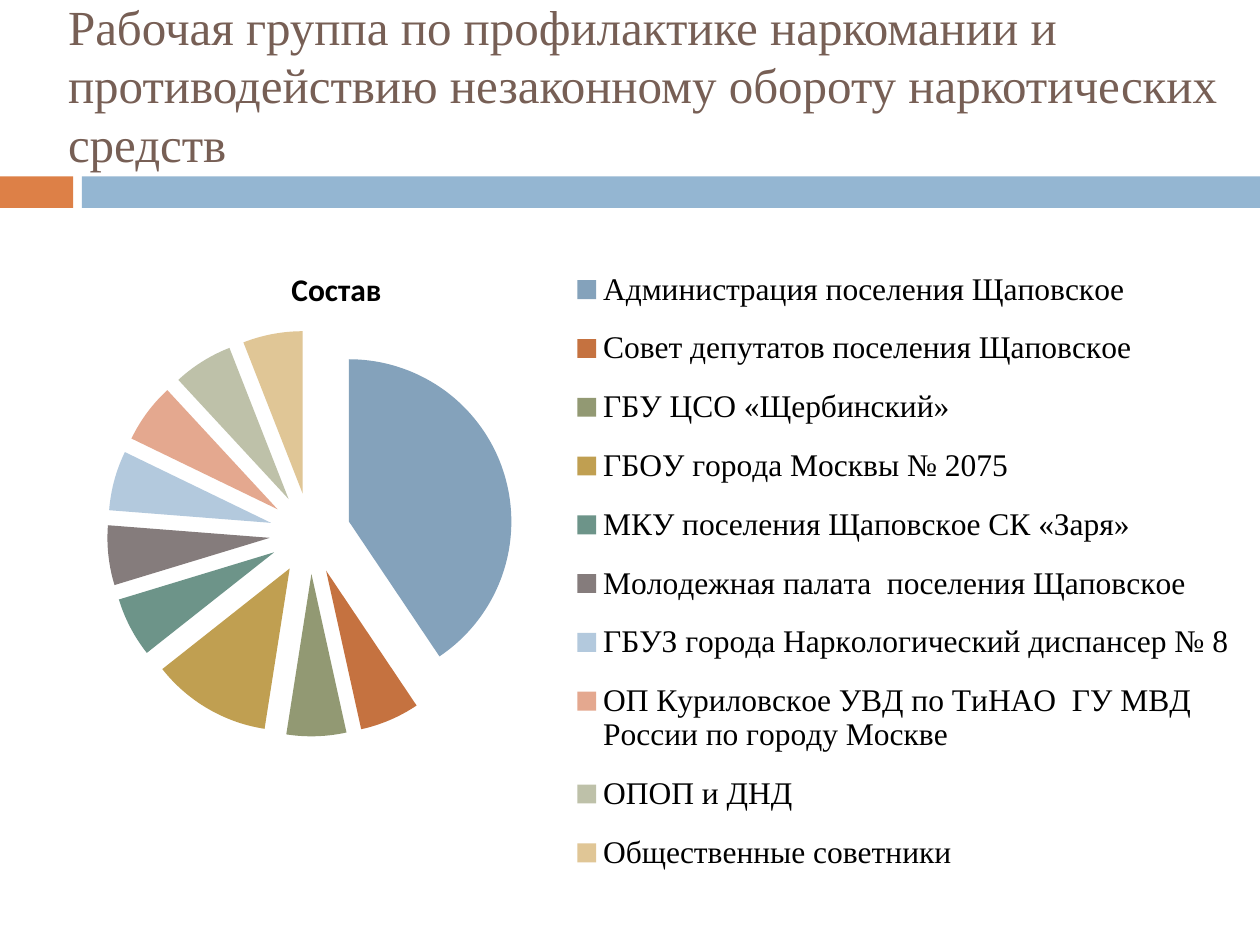
from lxml import etree
from pptx import Presentation
from pptx.chart.data import CategoryChartData
from pptx.dml.color import RGBColor
from pptx.enum.chart import XL_CHART_TYPE, XL_LEGEND_POSITION
from pptx.enum.shapes import MSO_SHAPE
from pptx.enum.text import MSO_ANCHOR, MSO_AUTO_SIZE, PP_ALIGN
from pptx.oxml import parse_xml
from pptx.oxml.ns import nsdecls, qn
from pptx.util import Inches, Pt

PIE = XL_CHART_TYPE.PIE
LEGEND_RIGHT = XL_LEGEND_POSITION.RIGHT
RECTANGLE = MSO_SHAPE.RECTANGLE
MIDDLE = MSO_ANCHOR.MIDDLE
NO_FIT = MSO_AUTO_SIZE.NONE
LEFT = PP_ALIGN.LEFT

COLORS = {"title": "775F55", "orange": "DD8047", "blue": "94B6D2", "text": "000000"}
SERIF, SANS = "Times New Roman", "Calibri"

# member, share, slice colour
MEMBERS = [
    ("Администрация поселения Щаповское", 41, "84A2BB"),
    ("Совет депутатов поселения Щаповское", 6, "C57240"),
    ("ГБУ ЦСО «Щербинский»", 6, "929973"),
    ("ГБОУ города Москвы № 2075", 12, "C09F51"),
    ("МКУ поселения Щаповское СК «Заря»", 6, "6D9489"),
    ("Молодежная палата  поселения Щаповское", 6, "857C7C"),
    ("ГБУЗ города Наркологический диспансер № 8", 6, "B3C9DD"),
    ("ОП Куриловское УВД по ТиНАО  ГУ МВД России по городу Москве", 6, "E4A88F"),
    ("ОПОП и ДНД", 6, "BEC1A9"),
    ("Общественные советники", 6, "E0C696"),
]


def set_font(font, name, size, color, bold=False):
    font.name = name
    font.size = Pt(size)
    font.bold = bold
    font.color.rgb = RGBColor.from_string(color)


def place_title(slide, left, top, width, height):
    title = slide.shapes.title
    title.left, title.top, title.width, title.height = left, top, width, height
    frame = title.text_frame
    frame.text = ("Рабочая группа по профилактике наркомании и "
                  "противодействию незаконному обороту наркотических средств")
    frame.word_wrap = True
    frame.auto_size = NO_FIT
    frame.vertical_anchor = MIDDLE
    heading = frame.paragraphs[0]
    heading.alignment = LEFT
    heading.line_spacing = 1.0
    set_font(heading.font, SERIF, 28, COLORS["title"])


def add_band(slide, left, top, width, height):
    """Draw a short orange block and a long blue one across the box."""
    accent, gap = Inches(0.58), Inches(0.07)
    blue_left = left + accent + gap
    for x, w, color in ((left, accent, "orange"),
                        (blue_left, left + width - blue_left, "blue")):
        block = slide.shapes.add_shape(RECTANGLE, x, top, w, height)
        block.shadow.inherit = False
        block.fill.solid()
        block.fill.fore_color.rgb = RGBColor.from_string(COLORS[color])
        block.line.fill.background()


def set_layout(element, before, x, y, w=None, h=None, inner=False):
    """Fix a chart part in fractions of the chart, ahead of the first tag in before."""
    for old in element.findall(qn("c:layout")):
        element.remove(old)
    layout = parse_xml(f"<c:layout {nsdecls('c')}><c:manualLayout/></c:layout>")
    settings = [("layoutTarget", "inner")] if inner else []
    settings += [("xMode", "edge"), ("yMode", "edge"), ("x", x), ("y", y)]
    if w is not None:
        settings += [("w", w), ("h", h)]
    for tag, value in settings:
        etree.SubElement(layout[0], qn(f"c:{tag}")).set("val", str(value))
    following = next(child for child in element
                     if child.tag in [qn(f"c:{tag}") for tag in before])
    following.addprevious(layout)


def add_membership_chart(slide, left, top, width, height):
    data = CategoryChartData()
    data.categories = [name for name, _, _ in MEMBERS]
    data.add_series("Состав", [share for _, share, _ in MEMBERS])
    chart = slide.shapes.add_chart(PIE, left, top, width, height, data).chart
    set_font(chart.font, SANS, 18, COLORS["text"])

    chart.has_title = True
    heading = chart.chart_title.text_frame
    heading.text = "Состав"
    set_font(heading.paragraphs[0].font, SANS, 18, COLORS["text"], bold=True)
    set_layout(chart.chart_title._element, ["overlay"], 0.22, 0.06)

    chart.has_legend = True
    legend = chart.legend
    legend.position = LEGEND_RIGHT
    legend.include_in_layout = False
    set_font(legend.font, SERIF, 18, COLORS["text"])
    set_layout(legend._element, ["overlay"], 0.46, 0.04, 0.54, 0.94)

    plot = chart.plots[0]
    plot.vary_by_categories = True
    set_layout(plot._element.getparent(), ["pieChart"],
               0.02, 0.16, 0.44, 0.59, inner=True)
    series = plot.series[0]
    for index, (_, _, color) in enumerate(MEMBERS):
        fill = series.points[index].format.fill
        fill.solid()
        fill.fore_color.rgb = RGBColor.from_string(color)
    explosion = parse_xml(f'<c:explosion {nsdecls("c")} val="25"/>')
    series._element.find(qn("c:dPt")).addprevious(explosion)


def main():
    prs = Presentation()
    prs.slide_width, prs.slide_height = Inches(10), Inches(7.5)
    slide = prs.slides.add_slide(prs.slide_layouts[5])
    add_band(slide, 0, Inches(1.4), prs.slide_width, Inches(0.25))
    place_title(slide, Inches(0.44), Inches(0.13), Inches(9.53), Inches(1.08))
    add_membership_chart(slide, Inches(0.12), Inches(1.75), Inches(9.76), Inches(5.46))
    prs.save("out.pptx")


if __name__ == "__main__":
    main()
